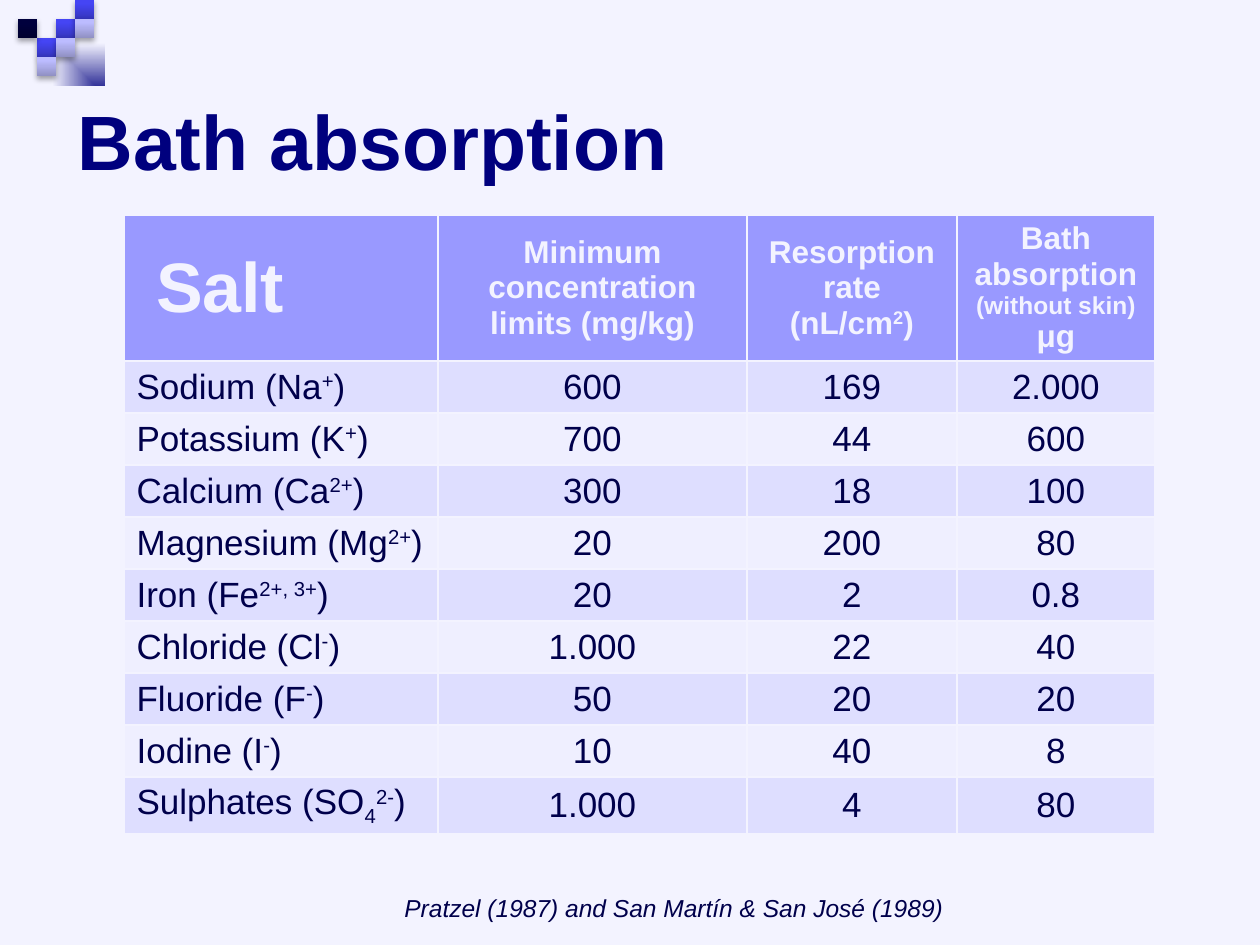
from lxml.etree import SubElement
from pptx import Presentation
from pptx.dml.color import RGBColor
from pptx.enum.shapes import MSO_SHAPE
from pptx.enum.text import MSO_ANCHOR, MSO_AUTO_SIZE, PP_ALIGN
from pptx.oxml import parse_xml
from pptx.oxml.ns import nsdecls, qn
from pptx.util import Emu, Pt

PX = 914400 // 126
NAVY, PALE = "00004B", "F3F3FF"
SUP, SUB = 30000, -25000
rgb = RGBColor.from_string


def add_run(p, text, size, color=NAVY, bold=False, italic=False, baseline=0):
    r = p.add_run()
    r.text = text
    f = r.font
    f.name, f.size, f.bold, f.italic = "Arial", Pt(size), bold, italic
    f.color.rgb = rgb(color)
    if baseline:
        r._r.get_or_add_rPr().set("baseline", str(baseline))


def add_gradient_box(x, y, w, h, stops):
    """Add a borderless rectangle with a two-stop vertical gradient."""
    sp = s.shapes.add_shape(MSO_SHAPE.RECTANGLE, *(Emu(v * PX) for v in (x, y, w, h)))
    sp.shadow.inherit = False
    sp.line.fill.background()
    sp.fill.gradient()
    sp.fill.gradient_angle = 90
    for stop, (position, color) in zip(sp.fill.gradient_stops, stops):
        stop.position = position
        stop.color.rgb = rgb(color)
    return sp


prs = Presentation()
prs.slide_width, prs.slide_height = Emu(1260 * PX), Emu(945 * PX)
s = prs.slides.add_slide(prs.slide_layouts[5])
s.background.fill.solid()
s.background.fill.fore_color.rgb = rgb(PALE)

# Corner decoration
corner = add_gradient_box(0, 0, 105, 86, [(0, "333399"), (1, PALE)])
xfrm = corner._element.spPr.find(qn("a:xfrm"))
xfrm.set("flipH", "1")
xfrm.set("flipV", "1")
grad = corner._element.spPr.find(qn("a:gradFill"))
grad.replace(grad.find(qn("a:lin")), parse_xml(
    f'<a:path {nsdecls("a")} path="rect"><a:fillToRect l="100000" t="100000"/></a:path>'))

BLUE = [(0, "3535BC"), (0.8, "4545F4")]
LILAC = [(0, "9191C4"), (0.8, "BCBCFF")]
DARK = [(0, "00002F"), (0.8, "00003D")]
squares = [(2, 1, BLUE), (3, 0, BLUE), (3, 1, LILAC), (1, 2, BLUE),
           (0, 1, DARK), (2, 2, LILAC), (1, 3, LILAC)]
for col, row, stops in squares:
    sp = add_gradient_box(18 + 19 * col, 19 * row, 19, 19, stops)
    effects = sp._element.spPr.find(qn("a:effectLst"))
    shadow = SubElement(effects, qn("a:outerShdw"), blurRad="39370", dist="22860",
                        dir="5400000", rotWithShape="0")
    black = SubElement(shadow, qn("a:srgbClr"), val="000000")
    SubElement(black, qn("a:alpha"), val="35000")

# Title
title = s.shapes.title
title.left, title.top, title.width, title.height = (Emu(v * PX) for v in (65, 45, 1185, 189))
tf = title.text_frame
tf.auto_size = MSO_AUTO_SIZE.NONE
tf.vertical_anchor = MSO_ANCHOR.MIDDLE
p = tf.paragraphs[0]
p.alignment = PP_ALIGN.LEFT
add_run(p, "Bath absorption", 44, "00007E", bold=True)

# Header cells hold (text, size, baseline) runs
header = [
    [("Salt", 40, 0)],
    [("Minimum concentration limits (mg/kg)", 18, 0)],
    [("Resorption rate (nL/cm", 18, 0), ("2", 18, SUP), (")", 18, 0)],
    [("Bath absorption ", 18, 0), ("(without skin) ", 14, 0), ("μg", 18, 0)],
]
# Salt name, subscript, charge, then the three values
salts = [
    ("Sodium (Na", "", "+", "600", "169", "2.000"),
    ("Potassium (K", "", "+", "700", "44", "600"),
    ("Calcium (Ca", "", "2+", "300", "18", "100"),
    ("Magnesium (Mg", "", "2+", "20", "200", "80"),
    ("Iron (Fe", "", "2+, 3+", "20", "2", "0.8"),
    ("Chloride (Cl", "", "-", "1.000", "22", "40"),
    ("Fluoride (F", "", "-", "50", "20", "20"),
    ("Iodine (I", "", "-", "10", "40", "8"),
    ("Sulphates (SO", "4", "2-", "1.000", "4", "80"),
]
rows = [header]
for name, sub, charge, *values in salts:
    formula = [(name, 20, 0), (sub, 20, SUB), (charge, 20, SUP), (")", 20, 0)]
    rows.append([[run for run in formula if run[0]]] + [[(v, 20, 0)] for v in values])

col_widths = [314, 309, 210, 198]
row_heights = [145] + [52] * 8 + [56]
table = s.shapes.add_table(
    len(rows), len(col_widths), Emu(124 * PX), Emu(215 * PX),
    Emu(sum(col_widths) * PX), Emu(sum(row_heights) * PX)).table
table.horz_banding = False
for column, width in zip(table.columns, col_widths):
    column.width = Emu(width * PX)
for i, (row, height) in enumerate(zip(rows, row_heights)):
    table.rows[i].height = Emu(height * PX)
    for j, runs in enumerate(row):
        cell = table.cell(i, j)
        cell.vertical_anchor = MSO_ANCHOR.MIDDLE
        tcPr = cell._tc.get_or_add_tcPr()
        for side in "LRTB":
            ln = SubElement(tcPr, qn(f"a:ln{side}"), w="12700")
            SubElement(SubElement(ln, qn("a:solidFill")), qn("a:srgbClr"), val=PALE)
        cell.fill.solid()
        fill = "9999FF" if i == 0 else "DEDEFF" if i % 2 else "EFEFFF"
        cell.fill.fore_color.rgb = rgb(fill)
        p = cell.text_frame.paragraphs[0]
        p.alignment = PP_ALIGN.CENTER if j else PP_ALIGN.LEFT
        for text, size, baseline in runs:
            add_run(p, text, size, NAVY if i else PALE, bold=i == 0, baseline=baseline)
table.cell(0, 0).margin_left = Emu(32 * PX)

# Citation
citation = s.shapes.add_textbox(*(Emu(v * PX) for v in (392, 887, 588, 43)))
tf = citation.text_frame
tf.word_wrap = False
tf.auto_size = MSO_AUTO_SIZE.SHAPE_TO_FIT_TEXT
add_run(tf.paragraphs[0], "Pratzel (1987) and San Martín & San José (1989)", 14, italic=True)

prs.save("out.pptx")
